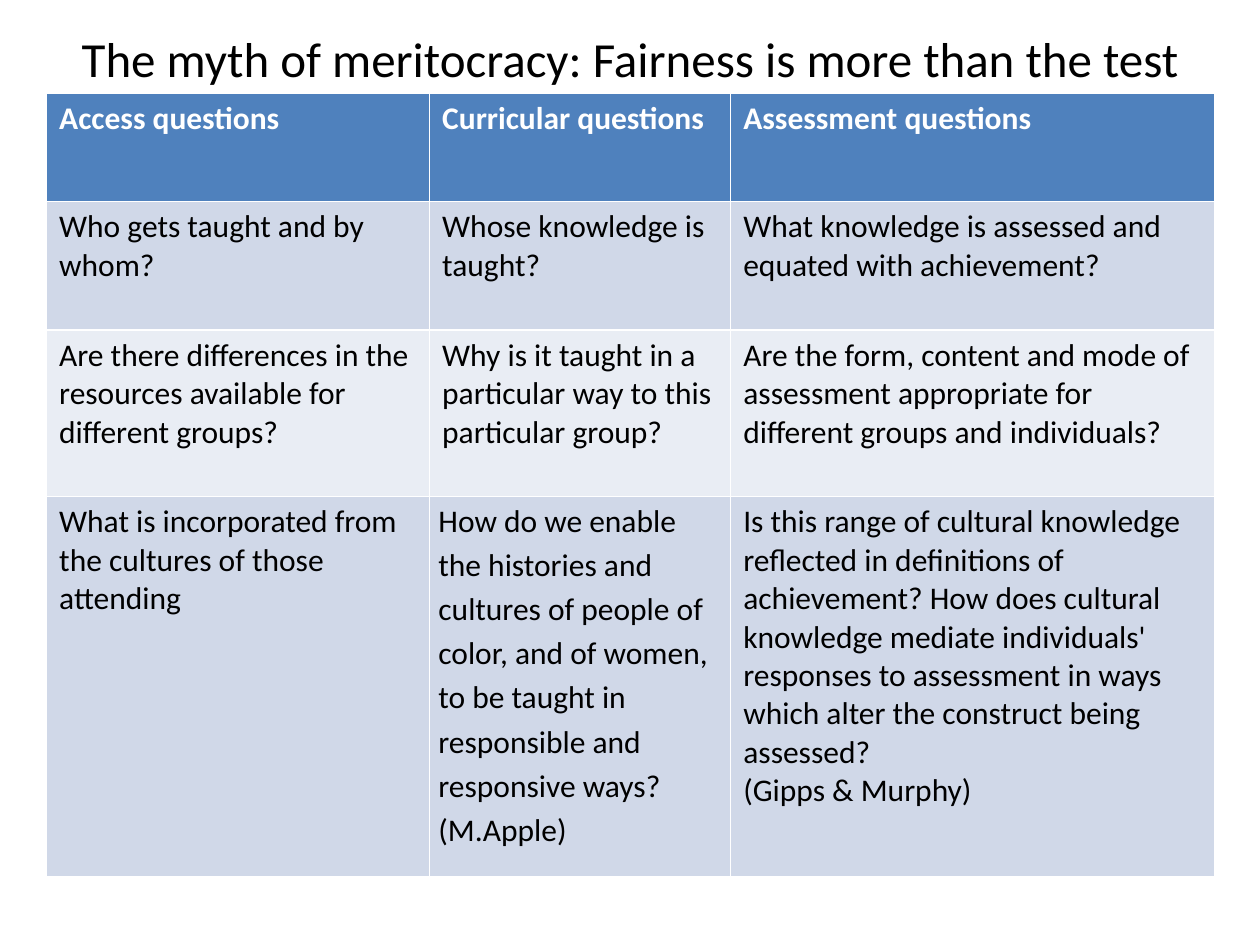
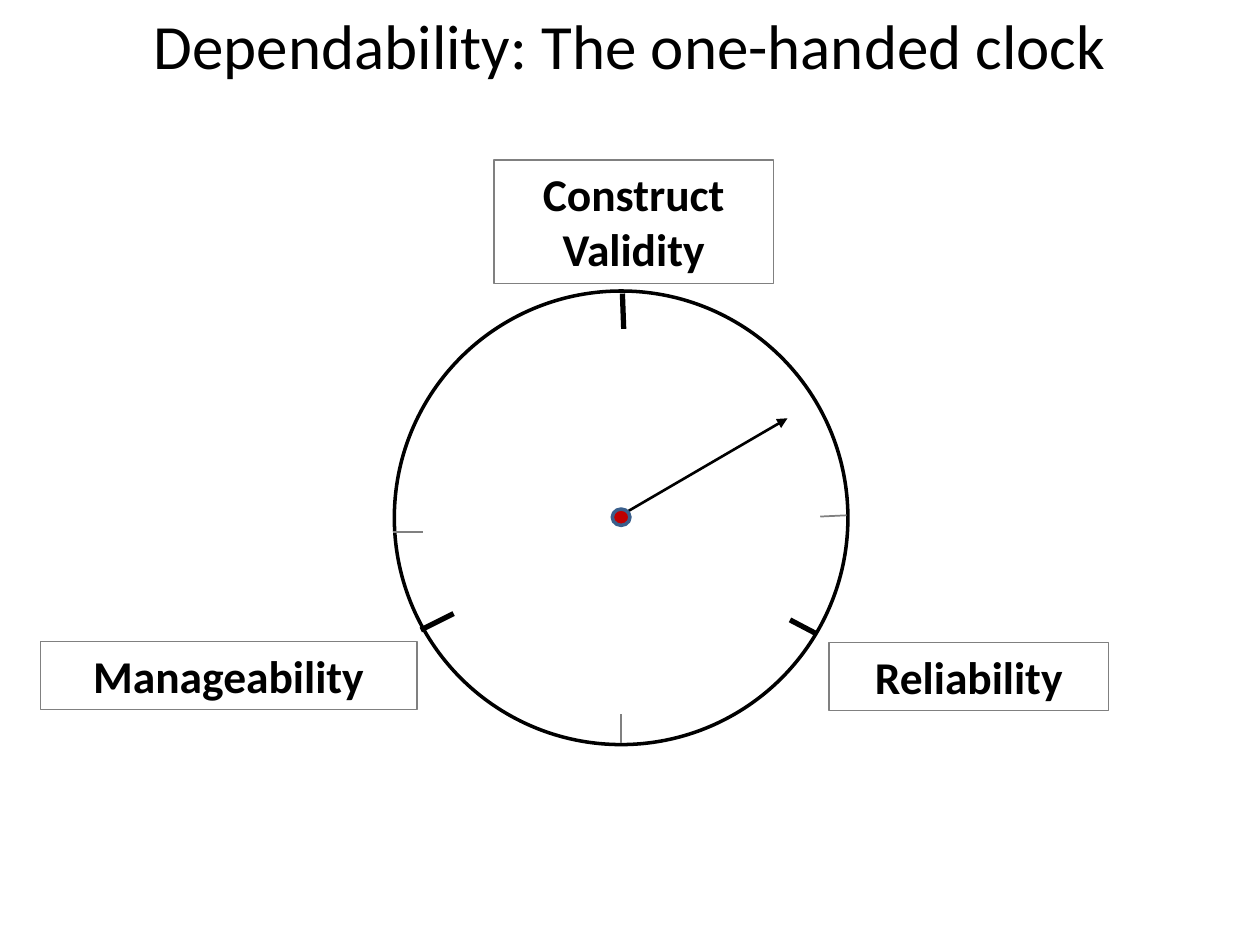
from lxml import etree
from pptx import Presentation
from pptx.dml.color import RGBColor
from pptx.enum.shapes import MSO_CONNECTOR, MSO_SHAPE
from pptx.enum.text import MSO_ANCHOR, PP_ALIGN
from pptx.oxml.ns import qn
from pptx.util import Inches, Pt

CENTER, LEFT = PP_ALIGN.CENTER, PP_ALIGN.LEFT
MIDDLE, TOP = MSO_ANCHOR.MIDDLE, MSO_ANCHOR.TOP
STRAIGHT = MSO_CONNECTOR.STRAIGHT
RECTANGLE, OVAL = MSO_SHAPE.RECTANGLE, MSO_SHAPE.OVAL

BLACK = RGBColor(0x00, 0x00, 0x00)
WHITE = RGBColor(0xFF, 0xFF, 0xFF)
GRAY = RGBColor(0x80, 0x80, 0x80)
HEADER_BLUE = RGBColor(0x4F, 0x81, 0xBD)
BAND_DARK = RGBColor(0xD0, 0xD8, 0xE8)
BAND_LIGHT = RGBColor(0xE9, 0xED, 0xF4)
PIVOT_RED = RGBColor(0xC0, 0x00, 0x00)
PIVOT_EDGE = RGBColor(0x3A, 0x5F, 0x8C)
FONT = "Calibri"

FAIRNESS_TITLE = "The myth of meritocracy: Fairness is more than the test"
QUESTIONS = [
    ["Access questions", "Curricular questions", "Assessment questions"],
    ["Who gets taught and by whom?",
     "Whose knowledge is taught?",
     "What knowledge is assessed and equated with achievement?"],
    ["Are there differences in the resources available for different groups?",
     "Why is it taught in a particular way to this particular group?",
     "Are the form, content and mode of assessment appropriate for "
     "different groups and individuals?"],
    ["What is incorporated from the cultures of those attending",
     "How do we enable the histories and cultures of people of color, and of "
     "women, to be taught in responsible and responsive ways?\n(M.Apple)",
     "Is this range of cultural knowledge reflected in definitions of "
     "achievement? How does cultural knowledge mediate individuals' responses "
     "to assessment in ways which alter the construct being assessed?\n"
     "(Gipps & Murphy)"],
]
COLUMN_WIDTHS = [3.04, 2.39, 3.84]
ROW_HEIGHTS = [0.86, 1.02, 1.32, 3.02]
LOOSE_CELL = (3, 1)

CLOCK_TITLE = "Dependability: The one-handed clock"
CLOCK_CENTER = (4.93, 4.11)
CLOCK_RADIUS = 1.8
PIVOT = (4.86, 4.04, 0.14, 0.13)
HAND = (4.98, 4.06, 6.25, 3.32)
MAIN_TICKS = [(4.94, 2.33, 4.95, 2.61), (6.27, 4.92, 6.48, 5.03), (3.34, 5, 3.6, 4.87)]
MINOR_TICKS = [(6.51, 4.1, 6.72, 4.09), (4.93, 5.9, 4.93, 5.67), (3.12, 4.22, 3.36, 4.22)]
LABELS = [
    ("Construct Validity", (3.92, 1.27, 2.22, 0.98)),
    ("Reliability", (6.58, 5.1, 2.22, 0.54)),
    ("Manageability", (0.32, 5.09, 2.99, 0.54)),
]


def inches(values):
    return [Inches(value) for value in values]


def write(frame, text, size, color=BLACK, bold=False, align=CENTER):
    frame.word_wrap = True
    frame.text = text
    for para in frame.paragraphs:
        para.alignment = align
        para.font.name, para.font.size = FONT, Pt(size)
        para.font.bold, para.font.color.rgb = bold, color


def add_title(page, text, size, height):
    box = page.shapes.add_textbox(*inches((0, 0, 10, height)))
    write(box.text_frame, text, size)
    box.text_frame.vertical_anchor = MIDDLE


def add_outlined(page, kind, place, line_color, width, fill=None):
    shape = page.shapes.add_shape(kind, *inches(place))
    shape.shadow.inherit = False
    if fill is None:
        shape.fill.background()
    else:
        shape.fill.solid()
        shape.fill.fore_color.rgb = fill
    shape.line.color.rgb, shape.line.width = line_color, Pt(width)
    return shape


def add_line(page, ends, color, width, arrow=False):
    line = page.shapes.add_connector(STRAIGHT, *inches(ends))
    line.line.color.rgb, line.line.width = color, Pt(width)
    if arrow:
        etree.SubElement(line.line._get_or_add_ln(), qn("a:tailEnd"), type="triangle")
    etree.SubElement(line._element.spPr, qn("a:effectLst"))


def add_cell_borders(cell):
    properties = cell._tc.get_or_add_tcPr()
    for index, side in enumerate(("lnL", "lnR", "lnT", "lnB")):
        border = etree.Element(qn(f"a:{side}"), w=str(Pt(1)))
        fill = etree.SubElement(border, qn("a:solidFill"))
        etree.SubElement(fill, qn("a:srgbClr"), val=str(WHITE))
        properties.insert(index, border)


def build_fairness(page):
    place = (0.37, 0.74, sum(COLUMN_WIDTHS), sum(ROW_HEIGHTS))
    table = page.shapes.add_table(
        len(ROW_HEIGHTS), len(COLUMN_WIDTHS), *inches(place)).table
    for column, width in zip(table.columns, COLUMN_WIDTHS):
        column.width = Inches(width)
    for row, height in zip(table.rows, ROW_HEIGHTS):
        row.height = Inches(height)
    for r, texts in enumerate(QUESTIONS):
        header = r == 0
        band = HEADER_BLUE if header else BAND_DARK if r % 2 else BAND_LIGHT
        for c, text in enumerate(texts):
            cell = table.cell(r, c)
            write(cell.text_frame, text, 18, WHITE if header else BLACK, header, LEFT)
            cell.vertical_anchor = TOP
            cell.fill.solid()
            cell.fill.fore_color.rgb = band
            add_cell_borders(cell)
    loose = table.cell(*LOOSE_CELL)
    loose.margin_left = loose.margin_right = Inches(0.07)
    loose.margin_top = loose.margin_bottom = 0
    for para in loose.text_frame.paragraphs:
        para.line_spacing = 1.15
    add_title(page, FAIRNESS_TITLE, 28, 0.92)


def build_clock(page):
    x, y = CLOCK_CENTER
    face = (x - CLOCK_RADIUS, y - CLOCK_RADIUS, 2 * CLOCK_RADIUS, 2 * CLOCK_RADIUS)
    add_outlined(page, OVAL, face, BLACK, 2)
    for ends in MINOR_TICKS:
        add_line(page, ends, GRAY, 1)
    for ends in MAIN_TICKS:
        add_line(page, ends, BLACK, 3)
    for text, place in LABELS:
        label = add_outlined(page, RECTANGLE, place, GRAY, 0.75)
        write(label.text_frame, text, 26, bold=True)
        label.text_frame.vertical_anchor = TOP
    add_line(page, HAND, BLACK, 1.5, arrow=True)
    add_outlined(page, OVAL, PIVOT, PIVOT_EDGE, 2, PIVOT_RED)
    add_title(page, CLOCK_TITLE, 36, 0.71)


def main():
    deck = Presentation()
    deck.slide_width, deck.slide_height = Inches(10), Inches(7.5)
    blank = deck.slide_layouts[6]
    for build in (build_fairness, build_clock):
        build(deck.slides.add_slide(blank))
    deck.save("out.pptx")


if __name__ == "__main__":
    main()
